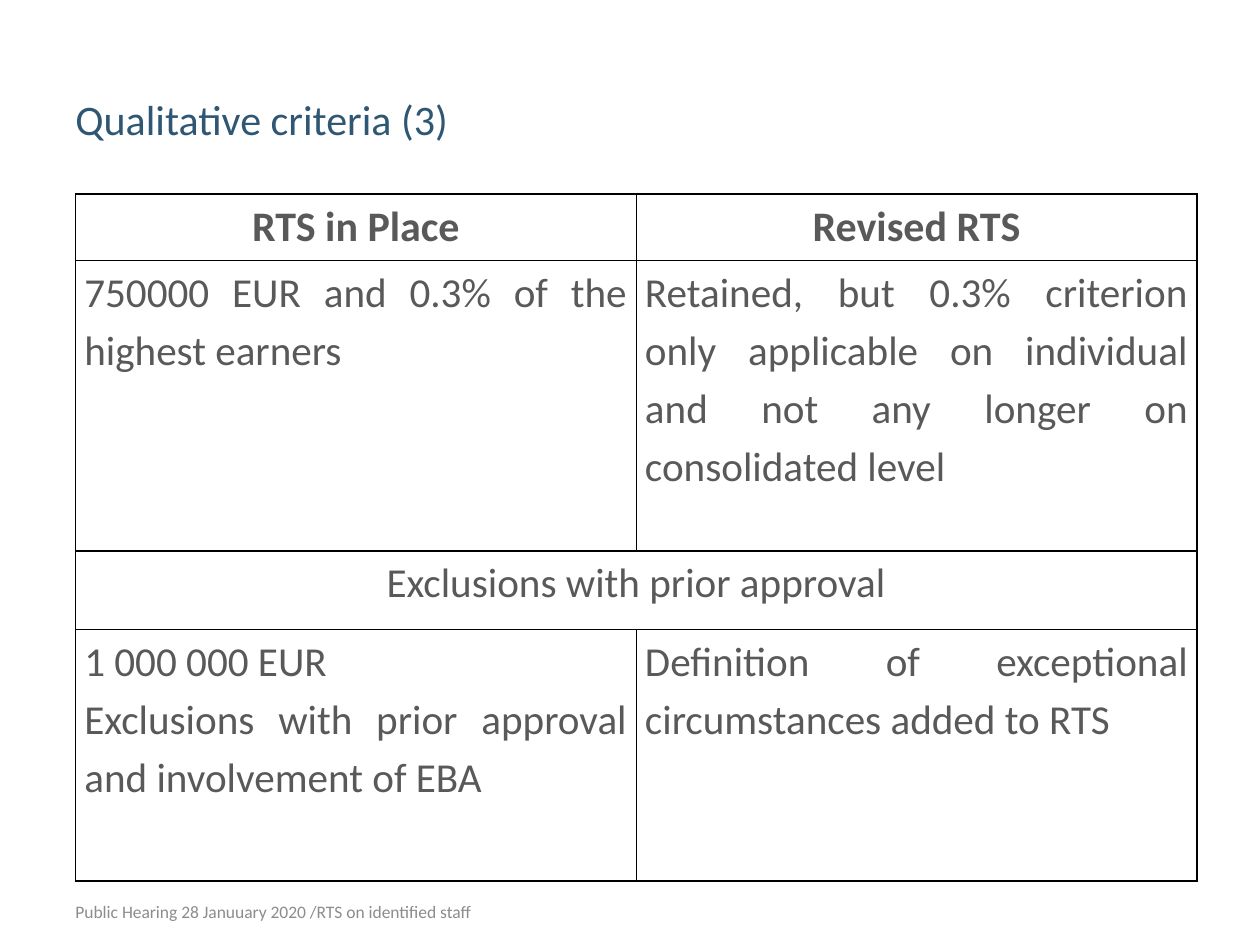
from lxml.etree import SubElement
from pptx import Presentation
from pptx.dml.color import RGBColor
from pptx.enum.text import MSO_ANCHOR as Anchor, PP_ALIGN as Align
from pptx.oxml.ns import qn
from pptx.util import Pt

FONT = "Calibri"
NAVY = RGBColor(0x2F, 0x57, 0x73)
DARK_GRAY = RGBColor(0x59, 0x59, 0x59)
LIGHT_GRAY = RGBColor(0x8C, 0x8C, 0x8C)
WHITE = RGBColor(0xFF, 0xFF, 0xFF)
BLACK = RGBColor(0, 0, 0)

ROW_HEIGHTS = (38, 166, 45, 143.5)
CRITERIA = (
    ("RTS in Place", "Revised RTS"),
    ("750000 EUR and 0.3% of the highest earners",
     "Retained, but 0.3% criterion only applicable on individual "
     "and not any longer on consolidated level"),
    ("Exclusions with prior approval",),
    ("1 000 000 EUR\nExclusions with prior approval and involvement of EBA",
     "Definition of exceptional circumstances added to RTS"),
)


def style_paragraph(paragraph, size, color, bold=False):
    """Set the font of every run in a paragraph."""
    for run in paragraph.runs:
        run.font.name = FONT
        run.font.size = Pt(size)
        run.font.bold = bold
        run.font.color.rgb = color


def add_line_of_text(slide, box, text, size, color):
    """Place one vertically centred line of text in a box."""
    frame = slide.shapes.add_textbox(*map(Pt, box)).text_frame
    frame.word_wrap = True
    frame.vertical_anchor = Anchor.MIDDLE
    frame.text = text
    style_paragraph(frame.paragraphs[0], size, color)


def add_borders(cell, width, color):
    """Draw a solid line on all four sides of a cell."""
    properties = cell._tc.get_or_add_tcPr()
    for side in ("lnL", "lnR", "lnT", "lnB"):
        line = SubElement(properties, qn(f"a:{side}"), w=str(Pt(width)))
        fill = SubElement(line, qn("a:solidFill"))
        SubElement(fill, qn("a:srgbClr"), val=str(color))


def fill_cell(cell, text, size, align, bold):
    """Write and format the text of one table cell."""
    cell.margin_left = cell.margin_right = Pt(5)
    cell.margin_top = cell.margin_bottom = Pt(0)
    cell.text = text
    for paragraph in cell.text_frame.paragraphs:
        paragraph.alignment = align
        paragraph.line_spacing = 1.15
        style_paragraph(paragraph, size, DARK_GRAY, bold)


def add_criteria_table(slide, box):
    """Place the comparison table, merging rows that hold a single entry."""
    table = slide.shapes.add_table(len(CRITERIA), 2, *map(Pt, box)).table
    for column in table.columns:
        column.width = Pt(box[2] / 2)
    for index, (height, entries) in enumerate(zip(ROW_HEIGHTS, CRITERIA)):
        row = table.rows[index]
        row.height = Pt(height)
        for cell in row.cells:
            add_borders(cell, 1, BLACK)
            cell.fill.solid()
            cell.fill.fore_color.rgb = WHITE
        is_header = index == 0
        is_merged = len(entries) == 1
        if is_merged:
            table.cell(index, 0).merge(table.cell(index, 1))
        align = Align.CENTER if is_header or is_merged else Align.JUSTIFY
        for cell, text in zip(row.cells, entries):
            fill_cell(cell, text, 24 if is_header else 23.5, align, is_header)


def main():
    """Build and save the slide."""
    deck = Presentation()
    deck.slide_width, deck.slide_height = Pt(720), Pt(540)
    slide = deck.slides.add_slide(deck.slide_layouts[6])
    add_line_of_text(slide, (36, 46, 525, 44), "Qualitative criteria (3)", 24, NAVY)
    add_criteria_table(slide, (43.2, 110.9, 640.8, sum(ROW_HEIGHTS)))
    add_line_of_text(slide, (36, 512, 387, 17.5),
                     "Public Hearing 28 Januuary 2020 /RTS on identified staff",
                     10, LIGHT_GRAY)
    deck.save("out.pptx")


if __name__ == "__main__":
    main()
